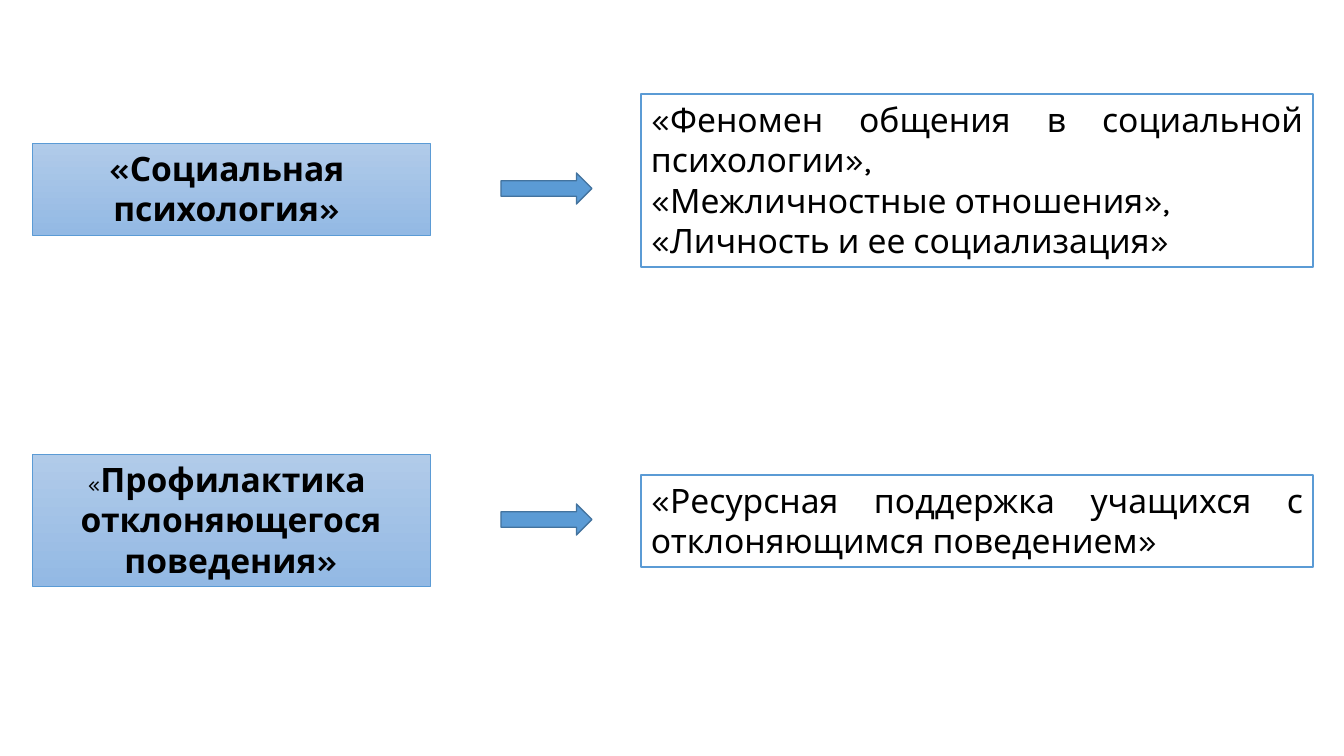
from dataclasses import dataclass

from pptx import Presentation
from pptx.dml.color import RGBColor
from pptx.enum.shapes import MSO_SHAPE
from pptx.enum.text import MSO_ANCHOR, MSO_AUTO_SIZE, PP_ALIGN
from pptx.shapes.autoshape import Shape
from pptx.slide import Slide
from pptx.util import Emu, Pt

EMU_PER_PX = 914400 / 100.8


@dataclass(frozen=True)
class Theme:
    font: str = "Karla"
    text: RGBColor = RGBColor(0x00, 0x00, 0x00)
    paper: RGBColor = RGBColor(0xFF, 0xFF, 0xFF)
    accent: RGBColor = RGBColor(0x5B, 0x9B, 0xD5)
    arrow_edge: RGBColor = RGBColor(0x43, 0x73, 0x9E)
    topic_top: RGBColor = RGBColor(0xB1, 0xCB, 0xE9)
    topic_bottom: RGBColor = RGBColor(0x93, 0xB9, 0xE4)
    body_size: int = 24
    small_size: int = 16


@dataclass(frozen=True)
class Span:
    text: str
    size: int
    bold: bool = False


@dataclass(frozen=True)
class Block:
    top: int
    height: int
    paras: list[list[Span]]


@dataclass(frozen=True)
class Row:
    topic: Block
    arrow_top: int
    courses: Block


THEME = Theme()
TOPIC_LEFT, TOPIC_WIDTH = 32, 398
ARROW_LEFT, ARROW_WIDTH, ARROW_HEIGHT = 501, 91, 31
COURSES_LEFT, COURSES_WIDTH = 641, 672


def px(length: int) -> Emu:
    return Emu(round(length * EMU_PER_PX))


def strong(text: str) -> Span:
    return Span(text, THEME.body_size, bold=True)


def plain(text: str) -> Span:
    return Span(text, THEME.body_size)


ROWS = [
    Row(
        topic=Block(143, 92, [[strong("«Социальная ")], [strong("психология» ")]]),
        arrow_top=173,
        courses=Block(94, 173, [
            [plain("«Феномен общения в социальной психологии», ")],
            [plain("«Межличностные отношения», ")],
            [plain("«Личность и ее социализация»")],
        ]),
    ),
    Row(
        topic=Block(454, 132, [
            [Span("«", THEME.small_size), strong("Профилактика ")],
            [strong("отклоняющегося поведения»")],
        ]),
        arrow_top=504,
        courses=Block(475, 92, [
            [plain("«Ресурсная поддержка учащихся с отклоняющимся поведением»")],
        ]),
    ),
]


def add_outlined(page: Slide, kind: MSO_SHAPE, left: int, top: int, width: int,
                 height: int, *, edge: RGBColor, weight: float) -> Shape:
    shape = page.shapes.add_shape(kind, px(left), px(top), px(width), px(height))
    shape.shadow.inherit = False
    shape.line.color.rgb = edge
    shape.line.width = Pt(weight)
    return shape


def write_paras(box: Shape, paras: list[list[Span]], *, align: PP_ALIGN) -> None:
    frame = box.text_frame
    frame.word_wrap = True
    frame.auto_size = MSO_AUTO_SIZE.SHAPE_TO_FIT_TEXT
    frame.vertical_anchor = MSO_ANCHOR.TOP
    for index, spans in enumerate(paras):
        para = frame.add_paragraph() if index else frame.paragraphs[0]
        para.alignment = align
        for span in spans:
            run = para.add_run()
            run.text = span.text
            run.font.name = THEME.font
            run.font.size = Pt(span.size)
            run.font.bold = span.bold
            run.font.color.rgb = THEME.text


def add_topic(page: Slide, block: Block) -> None:
    box = add_outlined(page, MSO_SHAPE.RECTANGLE, TOPIC_LEFT, block.top, TOPIC_WIDTH,
                       block.height, edge=THEME.accent, weight=0.5)
    box.fill.gradient()
    box.fill.gradient_angle = 270
    for stop, color in zip(box.fill.gradient_stops, (THEME.topic_top, THEME.topic_bottom)):
        stop.color.rgb = color
    write_paras(box, block.paras, align=PP_ALIGN.CENTER)


def add_courses(page: Slide, block: Block) -> None:
    box = add_outlined(page, MSO_SHAPE.RECTANGLE, COURSES_LEFT, block.top, COURSES_WIDTH,
                       block.height, edge=THEME.accent, weight=1)
    box.fill.solid()
    box.fill.fore_color.rgb = THEME.paper
    write_paras(box, block.paras, align=PP_ALIGN.JUSTIFY)


def add_arrow(page: Slide, top: int) -> None:
    arrow = add_outlined(page, MSO_SHAPE.RIGHT_ARROW, ARROW_LEFT, top, ARROW_WIDTH,
                         ARROW_HEIGHT, edge=THEME.arrow_edge, weight=1)
    arrow.fill.solid()
    arrow.fill.fore_color.rgb = THEME.accent


def main() -> None:
    deck = Presentation()
    deck.slide_width, deck.slide_height = px(1344), px(756)
    page = deck.slides.add_slide(deck.slide_layouts[6])
    for row in ROWS:
        add_topic(page, row.topic)
        add_courses(page, row.courses)
    for row in ROWS:
        add_arrow(page, row.arrow_top)
    deck.save("out.pptx")


if __name__ == "__main__":
    main()
